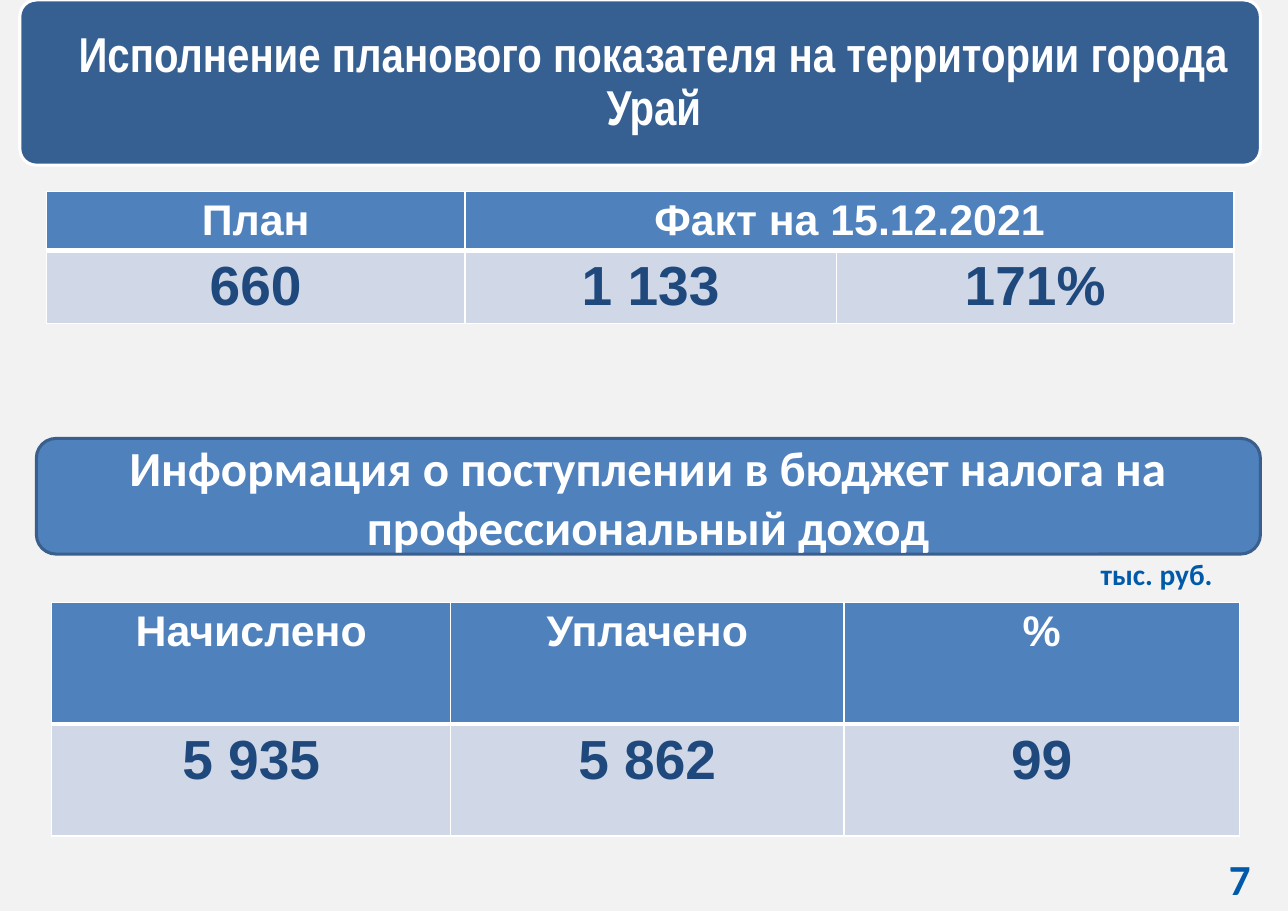
"""Build the slide on plan fulfilment and professional income tax receipts."""
from dataclasses import dataclass

from lxml import etree
from pptx import Presentation
from pptx import util as u
from pptx.dml.color import RGBColor
from pptx.enum import shapes, text
from pptx.oxml.ns import qn

WHITE, BLUE, PALE, NAVY, LABEL = "FFFFFF", "4F81BD", "D0D8E8", "1F497D", "005AA9"
CENTER, LEFT, RIGHT = text.PP_ALIGN.CENTER, text.PP_ALIGN.LEFT, text.PP_ALIGN.RIGHT


@dataclass
class Box:
    left: float
    top: float
    width: float
    height: float

    def emu(self) -> list:
        return [u.Inches(v) for v in (self.left, self.top, self.width, self.height)]


@dataclass
class Banner:
    box: Box
    fill: str
    line: str
    radius: float


@dataclass
class Label:
    box: Box
    words: str
    size: float
    align: int


@dataclass
class Grid:
    left: float
    top: float
    cols: list
    rows: list
    cells: list
    merge_from: int | None = None


BANNERS = [
    Banner(Box(0.18, 0, 11.26, 1.5), "376092", WHITE, 0.1),
    Banner(Box(0.33, 3.98, 11.11, 1.05), BLUE, "3A5F8C", 0.17),
]
LABELS = [
    Label(Box(9.88, 5.03, 1.65, 0.42), "тыс. руб.", 19.2, LEFT),
    Label(Box(10.89, 7.76, 0.57, 0.51), "7", 28, RIGHT),
]
GRIDS = [
    Grid(0.42, 1.74, [3.8, 3.37, 3.61], [0.53, 0.53],
         [["План", "Факт на 15.12.2021", ""], ["660", "1 133", "171%"]], 1),
    Grid(0.47, 5.47, [3.62, 3.57, 3.59], [1.1, 1.02],
         [["Начислено", "Уплачено", "%"], ["5 935", "5 862", "99"]]),
]


def rgb(value: str) -> RGBColor:
    return RGBColor.from_string(value)


def write(tf, words: str, size: float, font: str, color: str, align=CENTER,
          spacing: float = 1.0) -> None:
    tf.text = words
    tf.word_wrap = True
    p = tf.paragraphs[0]
    p.alignment = align
    p.line_spacing = spacing
    for r in p.runs:
        r.font.size = u.Pt(size)
        r.font.name = font
        r.font.bold = True
        r.font.color.rgb = rgb(color)


def set_frame(tf, side: float, edge: float) -> None:
    tf.auto_size = text.MSO_AUTO_SIZE.NONE
    tf.vertical_anchor = text.MSO_ANCHOR.MIDDLE
    tf.margin_left = tf.margin_right = u.Inches(side)
    tf.margin_top = tf.margin_bottom = u.Inches(edge)


def add_banner(s, banner: Banner):
    sp = s.shapes.add_shape(shapes.MSO_SHAPE.ROUNDED_RECTANGLE, *banner.box.emu())
    sp.adjustments[0] = banner.radius
    sp.shadow.inherit = False
    sp.fill.solid()
    sp.fill.fore_color.rgb = rgb(banner.fill)
    sp.line.color.rgb = rgb(banner.line)
    sp.line.width = u.Pt(2)
    return sp


def add_label(s, label: Label) -> None:
    tf = s.shapes.add_textbox(*label.box.emu()).text_frame
    set_frame(tf, 0.11, 0.06)
    write(tf, label.words, label.size, "Calibri", LABEL, label.align, 0.8)


def set_borders(cell, widths: dict) -> None:
    tcPr = cell._tc.get_or_add_tcPr()
    for side, width in widths.items():
        ln = etree.SubElement(tcPr, qn(f"a:ln{side}"), w=str(u.Pt(width)))
        fill = etree.SubElement(ln, qn("a:solidFill"))
        etree.SubElement(fill, qn("a:srgbClr"), val=WHITE)


def add_grid(s, grid: Grid) -> None:
    box = Box(grid.left, grid.top, sum(grid.cols), sum(grid.rows))
    table = s.shapes.add_table(len(grid.rows), len(grid.cols), *box.emu()).table
    for column, width in zip(table.columns, grid.cols):
        column.width = u.Inches(width)
    for i, (row, height) in enumerate(zip(table.rows, grid.rows)):
        row.height = u.Inches(height)
        header = i == 0
        for cell, words in zip(row.cells, grid.cells[i]):
            set_borders(cell, {"L": 1, "R": 1, "T": 1 if header else 3,
                               "B": 3 if header else 1})
            cell.fill.solid()
            cell.fill.fore_color.rgb = rgb(BLUE if header else PALE)
            write(cell.text_frame, words, 28 if header else 36, "Arial",
                  WHITE if header else NAVY)
    if grid.merge_from is not None:
        table.cell(0, grid.merge_from).merge(table.cell(0, len(grid.cols) - 1))


def add_title(s) -> None:
    title = s.shapes.title
    title.element.getparent().append(title.element)
    title.left, title.top, title.width, title.height = Box(0.33, 0.33, 11.21, 0.85).emu()
    set_frame(title.text_frame, 0.07, 0.04)
    write(title.text_frame, "Исполнение планового показателя на территории города Урай",
          32, "Arial Narrow", WHITE, spacing=0.9)


def main() -> None:
    prs = Presentation()
    prs.slide_width, prs.slide_height = u.Inches(11.69), u.Inches(8.27)
    s = prs.slides.add_slide(prs.slide_layouts.get_by_name("Title Only"))
    s.background.fill.solid()
    s.background.fill.fore_color.rgb = rgb("F2F2F2")
    for grid in GRIDS:
        add_grid(s, grid)
    _, tax_banner = [add_banner(s, banner) for banner in BANNERS]
    set_frame(tax_banner.text_frame, 0.1, 0.05)
    write(tax_banner.text_frame,
          "Информация о поступлении в бюджет налога на профессиональный доход",
          32, "Calibri", WHITE)
    add_title(s)
    for label in LABELS:
        add_label(s, label)
    prs.save("out.pptx")


if __name__ == "__main__":
    main()
